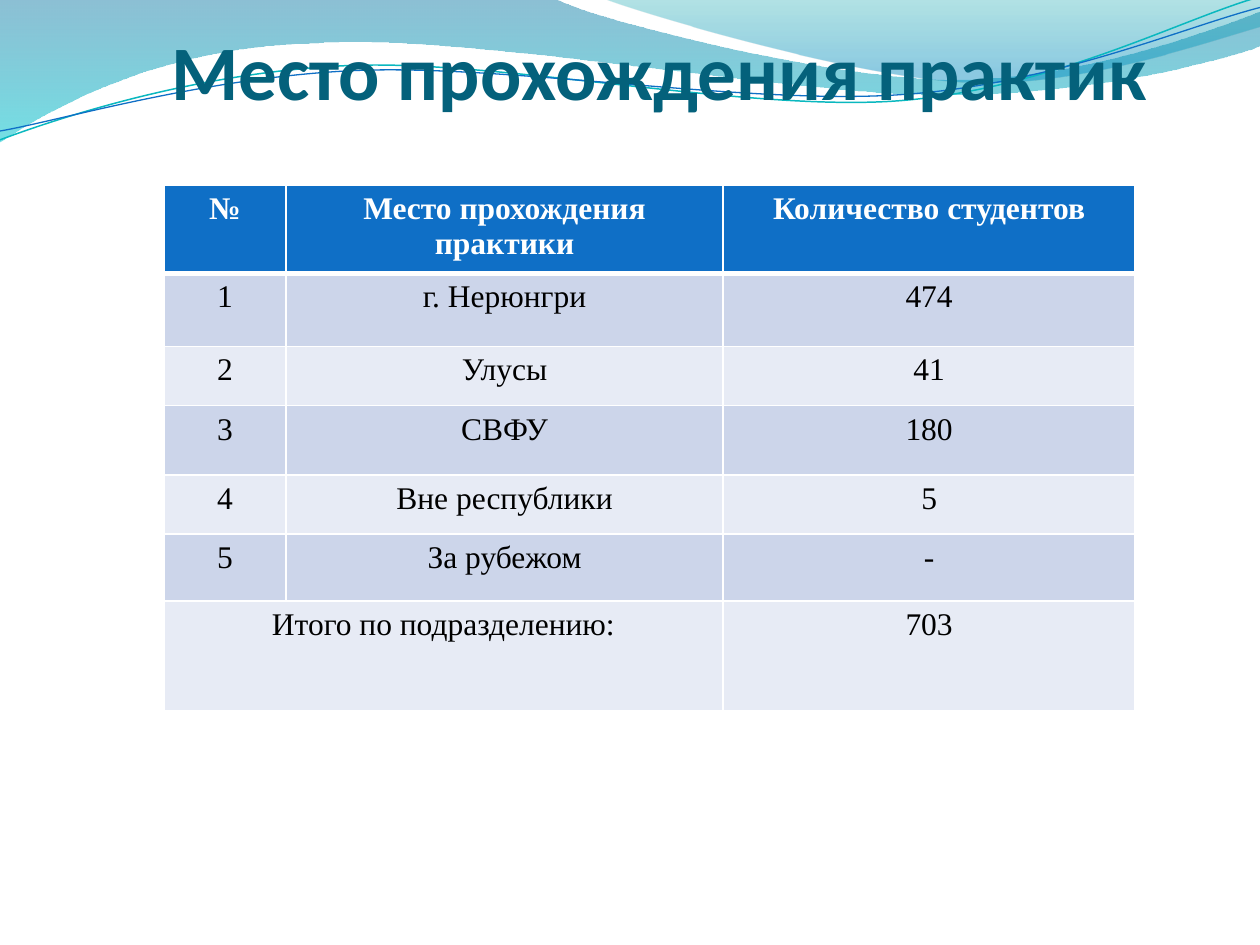
"""Builds the practice placement slide: a wave header, a title and a table."""
from dataclasses import dataclass
from math import cos, radians, sin

from lxml.etree import SubElement
from pptx import Presentation
from pptx.dml.color import RGBColor
from pptx.enum.text import MSO_ANCHOR, PP_ALIGN
from pptx.oxml import parse_xml
from pptx.oxml.ns import nsdecls, qn
from pptx.util import Inches, Pt

WHITE = RGBColor(0xFF, 0xFF, 0xFF)
BLACK = RGBColor(0, 0, 0)
TITLE = RGBColor(0x04, 0x61, 0x7B)
BLUE = RGBColor(0x0F, 0x6F, 0xC6)
TEAL = RGBColor(0x0A, 0xB8, 0xBF)
BANDS = RGBColor(0xCC, 0xD5, 0xEA), RGBColor(0xE7, 0xEB, 0xF5)

Point = tuple[float, float]


@dataclass(frozen=True)
class Stop:
    position: int
    color: RGBColor
    opacity: int


@dataclass(frozen=True)
class Outline:
    """A start point, then segments of one point (line) or three (curve)."""
    start: Point
    segments: tuple[tuple[Point, ...], ...]


@dataclass(frozen=True)
class Wave:
    outline: Outline
    stops: tuple[Stop, Stop]


@dataclass(frozen=True)
class Strand:
    outline: Outline
    center: Point
    color: RGBColor
    width: float


WAVES = (
    Wave(Outline((0, 0), (
        ((4.4, -0.01),),
        ((4.76, 0.17), (6.64, 0.63), (7.58, 0.63)),
        ((8.53, 0.63), (9.58, 0.26), (10, 0.09)),
        ((10.01, 0.36),),
        ((9.83, 0.44), (8.7, 0.76), (7.46, 0.75)),
        ((6.22, 0.75), (3.82, 0.28), (2.57, 0.34)),
        ((1.29, 0.36), (0.46, 0.83), (-0.01, 1.13)))),
        (Stop(0, RGBColor(0x00, 0x74, 0xA1), 45), Stop(100, RGBColor(0x00, 0xC6, 0xCF), 55))),
    Wave(Outline((4.79, -0.01), (
        ((5.09, 0.11), (6.82, 0.62), (7.69, 0.65)),
        ((8.56, 0.69), (9.61, 0.32), (10, 0.21)),
        ((10, 0),))),
        (Stop(0, RGBColor(0x00, 0xA1, 0xA9), 30), Stop(80, RGBColor(0x00, 0x8B, 0xBF), 45))),
)
STRAND_TILT = -2.7
STRANDS = (
    Strand(Outline((0, 1.11), (
        ((0.48, 0.93), (1.58, 0.57), (2.77, 0.52)),
        ((3.95, 0.47), (5.93, 0.89), (7.13, 0.8)),
        ((8.33, 0.71), (9.38, 0.15), (9.98, -0.02)))), (4.99, 0.58), TEAL, 0.85),
    Strand(Outline((0, 1.04), (
        ((0.47, 0.96), (1.64, 0.61), (2.83, 0.56)),
        ((4.03, 0.51), (5.97, 0.84), (7.17, 0.75)),
        ((8.36, 0.67), (9.41, 0.21), (10, 0.06)))), (5, 0.59), BLUE, 0.75),
)

COLUMNS = 0.97, 3.47, 3.27
ROWS = (
    (0.41, ("№", "Место прохождения практики", "Количество студентов")),
    (0.58, ("1", "г. Нерюнгри", "474")),
    (0.47, ("2", "Улусы", "41")),
    (0.55, ("3", "СВФУ", "180")),
    (0.47, ("4", "Вне республики", "5")),
    (0.53, ("5", "За рубежом", "-")),
    (0.87, ("Итого по подразделению:", "", "703")),
)


def turn(outline: Outline, center: Point, degrees: float) -> Outline:
    """Turns an outline clockwise about a center."""
    c, s = cos(radians(degrees)), sin(radians(degrees))

    def turned(point: Point) -> Point:
        dx, dy = point[0] - center[0], point[1] - center[1]
        return center[0] + dx * c - dy * s, center[1] + dx * s + dy * c

    return Outline(turned(outline.start),
                   tuple(tuple(map(turned, seg)) for seg in outline.segments))


def add_outline(slide, outline: Outline, close: bool):
    """Adds a freeform whose three-point segments are Bezier curves."""
    builder = slide.shapes.build_freeform(*map(Inches, outline.start))
    points = [tuple(map(Inches, p)) for seg in outline.segments for p in seg]
    builder.add_line_segments(points, close=close)
    shape = builder.convert_to_shape()
    shape.shadow.inherit = False
    lines = list(shape.element.iter(qn("a:lnTo")))
    for seg in outline.segments:
        group, lines = lines[:len(seg)], lines[len(seg):]
        if len(seg) == 3:
            curve = parse_xml(f"<a:cubicBezTo {nsdecls('a')}/>")
            group[0].addprevious(curve)
            for line in group:
                curve.append(line[0])
                line.getparent().remove(line)
    return shape


def add_wave(slide, wave: Wave) -> None:
    """Adds a translucent shape with a top-to-bottom gradient."""
    shape = add_outline(slide, wave.outline, True)
    shape.line.fill.background()
    shape.fill.gradient()
    stops = "".join(
        f'<a:gs pos="{s.position * 1000}"><a:srgbClr val="{s.color}">'
        f'<a:alpha val="{s.opacity * 1000}"/></a:srgbClr></a:gs>' for s in wave.stops)
    old = shape.element.spPr.find(qn("a:gradFill"))
    old.getparent().replace(old, parse_xml(
        f'<a:gradFill {nsdecls("a")} rotWithShape="1"><a:gsLst>{stops}</a:gsLst>'
        '<a:lin ang="5400000" scaled="0"/></a:gradFill>'))


def add_strand(slide, strand: Strand) -> None:
    """Adds a tilted thin curve."""
    shape = add_outline(slide, turn(strand.outline, strand.center, -STRAND_TILT), False)
    shape.rotation = STRAND_TILT
    shape.fill.background()
    shape.line.color.rgb = strand.color
    shape.line.width = Pt(strand.width)


def add_title(slide, text: str) -> None:
    """Adds the slide title."""
    tf = slide.shapes.add_textbox(Inches(0.94), Inches(0.08), Inches(8.59), Inches(0.84)).text_frame
    tf.word_wrap = True
    tf.vertical_anchor = MSO_ANCHOR.BOTTOM
    tf.margin_left = tf.margin_right = tf.margin_bottom = 0
    tf.margin_top = Inches(0.05)
    set_text(tf, text, "Calibri", 44, TITLE, True)


def set_text(tf, text: str, font: str, size: float, color: RGBColor, bold: bool) -> None:
    """Writes one centred paragraph."""
    p = tf.paragraphs[0]
    p.text = text
    p.alignment = PP_ALIGN.CENTER
    p.font.name, p.font.size, p.font.bold = font, Pt(size), bold
    p.font.color.rgb = color


def set_borders(cell, top: float, bottom: float) -> None:
    """Draws white borders, with one point at the sides."""
    tcPr = cell._tc.get_or_add_tcPr()
    for i, (side, width) in enumerate(zip("LRTB", (1, 1, top, bottom))):
        ln = parse_xml(f'<a:ln{side} {nsdecls("a")} w="{Pt(width)}"/>')
        SubElement(SubElement(ln, qn("a:solidFill")), qn("a:srgbClr"), val=str(WHITE))
        tcPr.insert(i, ln)


def add_placement_table(slide) -> None:
    """Adds the table of placements with a merged total row."""
    table = slide.shapes.add_table(len(ROWS), len(COLUMNS), Inches(1.3), Inches(1.47),
                                   Inches(sum(COLUMNS)), Inches(sum(h for h, _ in ROWS))).table
    for column, width in zip(table.columns, COLUMNS):
        column.width = Inches(width)
    for i, (height, texts) in enumerate(ROWS):
        table.rows[i].height = Inches(height)
        header = i == 0
        for cell, text in zip(table.rows[i].cells, texts):
            cell.fill.solid()
            cell.fill.fore_color.rgb = BLUE if header else BANDS[(i - 1) % 2]
            set_borders(cell, 3 if i == 1 else 1, 3 if header else 1)
            set_text(cell.text_frame, text, "Times New Roman", 18,
                     WHITE if header else BLACK, header)
    last = len(ROWS) - 1
    table.cell(last, 0).merge(table.cell(last, 1))


def main() -> None:
    """Builds and saves the slide."""
    prs = Presentation()
    prs.slide_width, prs.slide_height = Inches(10), Inches(7.5)
    slide = prs.slides.add_slide(prs.slide_layouts[6])
    for wave in WAVES:
        add_wave(slide, wave)
    for strand in STRANDS:
        add_strand(slide, strand)
    add_title(slide, "Место прохождения практик")
    add_placement_table(slide)
    prs.save("out.pptx")


if __name__ == "__main__":
    main()
